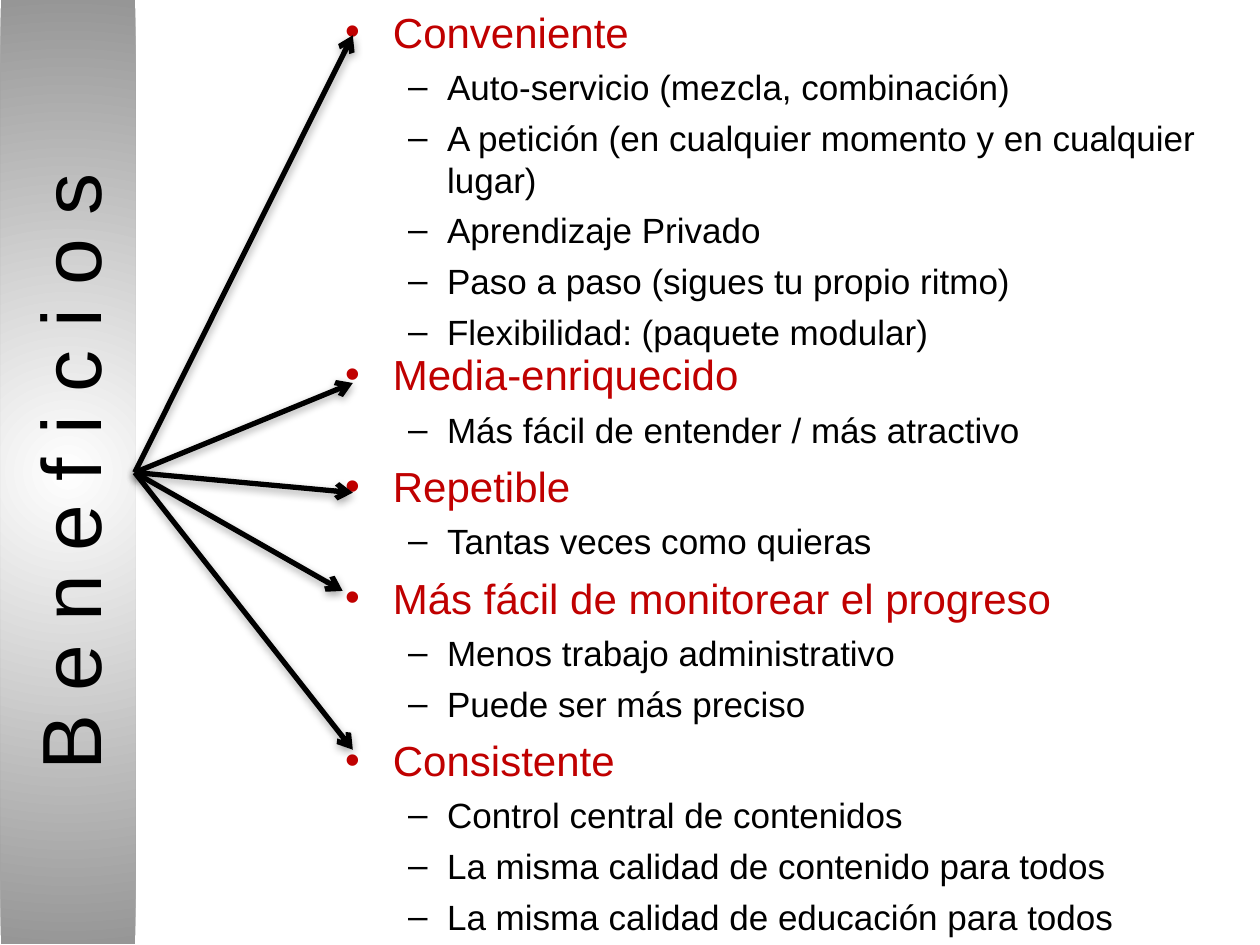
from lxml import etree
from pptx import Presentation
from pptx.dml.color import RGBColor
from pptx.enum.shapes import MSO_CONNECTOR as CONNECTOR, MSO_SHAPE as SHAPE
from pptx.enum.text import MSO_ANCHOR as ANCHOR, PP_ALIGN as ALIGN
from pptx.oxml import parse_xml
from pptx.util import Inches, Pt

NAMESPACE = 'xmlns:a="http://schemas.openxmlformats.org/drawingml/2006/main"'
DRAWING = "{http://schemas.openxmlformats.org/drawingml/2006/main}"


def color(value):
    return RGBColor.from_string(value)


def format_font(font, values):
    font.color.rgb = color(values["color"])
    for name in ("name", "size"):
        setattr(font, name, values[name])


presentation = Presentation()
presentation.slide_width = Inches(10)
presentation.slide_height = Inches(7.5)
slide = presentation.slides.add_slide(presentation.slide_layouts[6])

# Vertical title band with a radial gradient
band = slide.shapes.add_shape(
    SHAPE.RECTANGLE, Inches(-3.21), Inches(3.21), Inches(7.5), Inches(1.07))
band.rotation = 270
band.shadow.inherit = False
band.line.fill.background()
band.fill.gradient()
gradient = band._element.spPr.find(DRAWING + "gradFill")
gradient.getparent().replace(gradient, parse_xml(
    f'<a:gradFill {NAMESPACE} rotWithShape="1"><a:gsLst>'
    '<a:gs pos="0"><a:srgbClr val="FFFFFF"/></a:gs>'
    '<a:gs pos="100000"><a:srgbClr val="969696"/></a:gs></a:gsLst>'
    '<a:path path="circle"><a:fillToRect l="50000" t="50000" r="50000" b="50000"/>'
    '</a:path></a:gradFill>'))
band.text_frame.vertical_anchor = ANCHOR.MIDDLE
paragraph = band.text_frame.paragraphs[0]
paragraph.alignment = ALIGN.CENTER
run = paragraph.add_run()
run.text = "B e n e f i c i o s"
format_font(run.font, {"name": "Arial", "size": Pt(48), "color": "000000"})

# Bulleted lists: a heading level and a detail level
HEADING = {"name": "Arial", "size": Pt(24), "color": "C00000", "bullet": "•",
           "margin": 0.38, "hanging": 0.38, "before": Pt(6), "level": 0}
DETAIL = {"name": "Arial", "size": Pt(20), "color": "000000", "bullet": "–",
          "margin": 0.81, "hanging": 0.31, "before": Pt(5), "level": 1}
benefit_lists = [
    ((2.64, 0, 7.72, 2.68), [
        ("Conveniente", [
            "Auto-servicio (mezcla, combinación)",
            "A petición (en cualquier momento y en cualquier lugar)",
            "Aprendizaje Privado",
            "Paso a paso (sigues tu propio ritmo)",
            "Flexibilidad: (paquete modular)"]),
    ]),
    ((2.64, 2.72, 7.24, 4.5), [
        ("Media-enriquecido", ["Más fácil de entender / más atractivo"]),
        ("Repetible", ["Tantas veces como quieras"]),
        ("Más fácil de monitorear el progreso", [
            "Menos trabajo administrativo",
            "Puede ser más preciso"]),
        ("Consistente", [
            "Control central de contenidos",
            "La misma calidad de contenido para todos",
            "La misma calidad de educación para todos"]),
    ]),
]
for position, benefits in benefit_lists:
    text_frame = slide.shapes.add_textbox(*map(Inches, position)).text_frame
    text_frame.word_wrap = True
    lines = []
    for heading, details in benefits:
        lines.append((heading, HEADING))
        lines += [(detail, DETAIL) for detail in details]
    for index, (text, style) in enumerate(lines):
        paragraph = text_frame.add_paragraph() if index else text_frame.paragraphs[0]
        paragraph.level = style["level"]
        paragraph.space_before = style["before"]
        run = paragraph.add_run()
        run.text = text
        format_font(run.font, style)
        properties = paragraph._p.get_or_add_pPr()
        properties.set("marL", str(Inches(style["margin"])))
        properties.set("indent", str(-Inches(style["hanging"])))
        etree.SubElement(properties, DRAWING + "buFont", typeface="Arial")
        etree.SubElement(properties, DRAWING + "buChar", char=style["bullet"])

# Arrows from the band to each heading
for end_x, end_y in [(2.8, 0.28), (2.8, 3.04), (2.8, 3.91), (2.72, 4.69), (2.8, 5.95)]:
    arrow = slide.shapes.add_connector(
        CONNECTOR.STRAIGHT, Inches(1.07), Inches(3.75), Inches(end_x), Inches(end_y))
    arrow.line.color.rgb = color("000000")
    arrow.line.width = Pt(3)
    etree.SubElement(arrow.line._get_or_add_ln(), DRAWING + "tailEnd", type="arrow")
    arrow._element.spPr.append(parse_xml(
        f'<a:effectLst {NAMESPACE}><a:outerShdw blurRad="{Pt(5)}" dist="{Pt(1.8)}" '
        'dir="5400000" rotWithShape="0"><a:srgbClr val="000000">'
        '<a:alpha val="35000"/></a:srgbClr></a:outerShdw></a:effectLst>'))

presentation.save("out.pptx")
